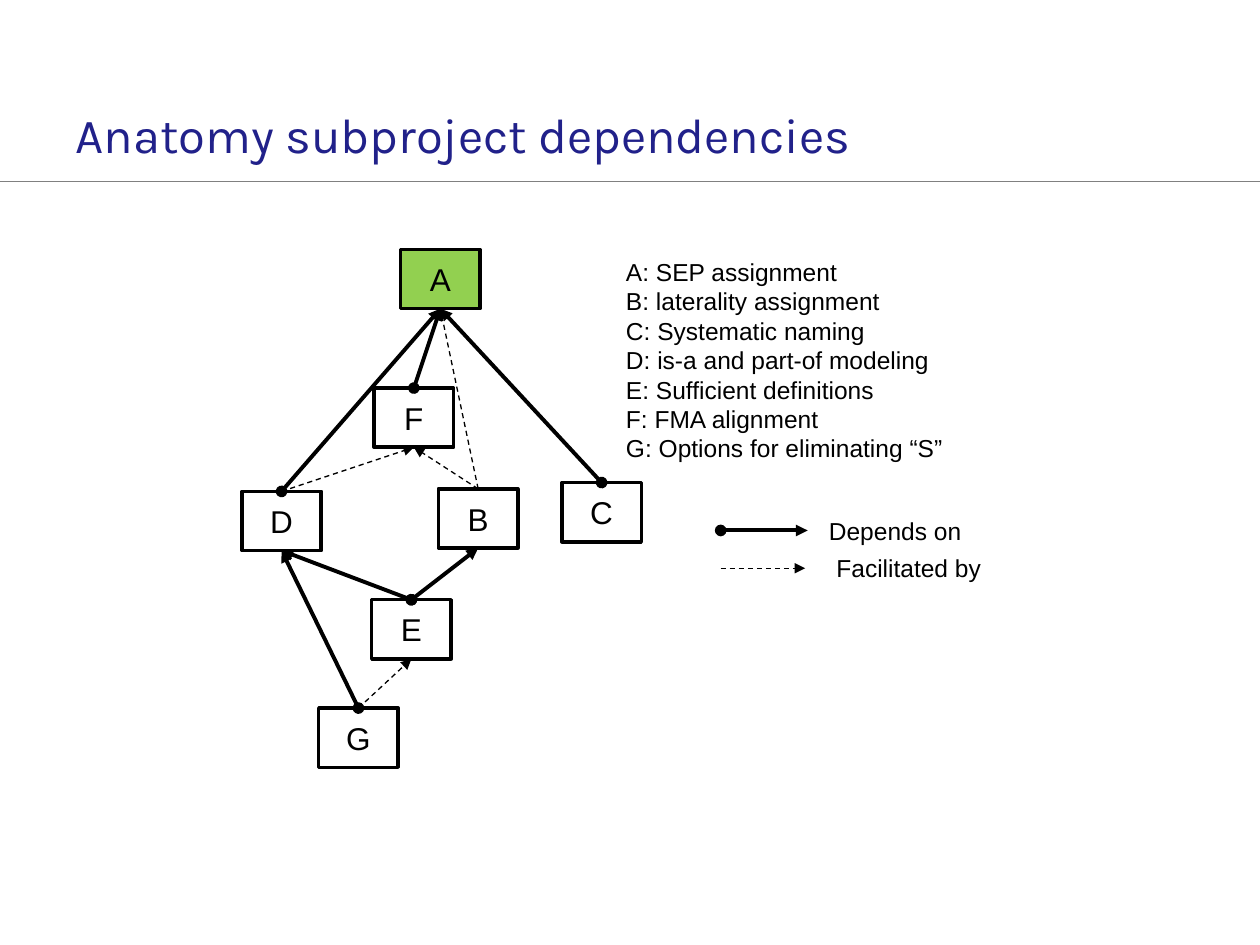
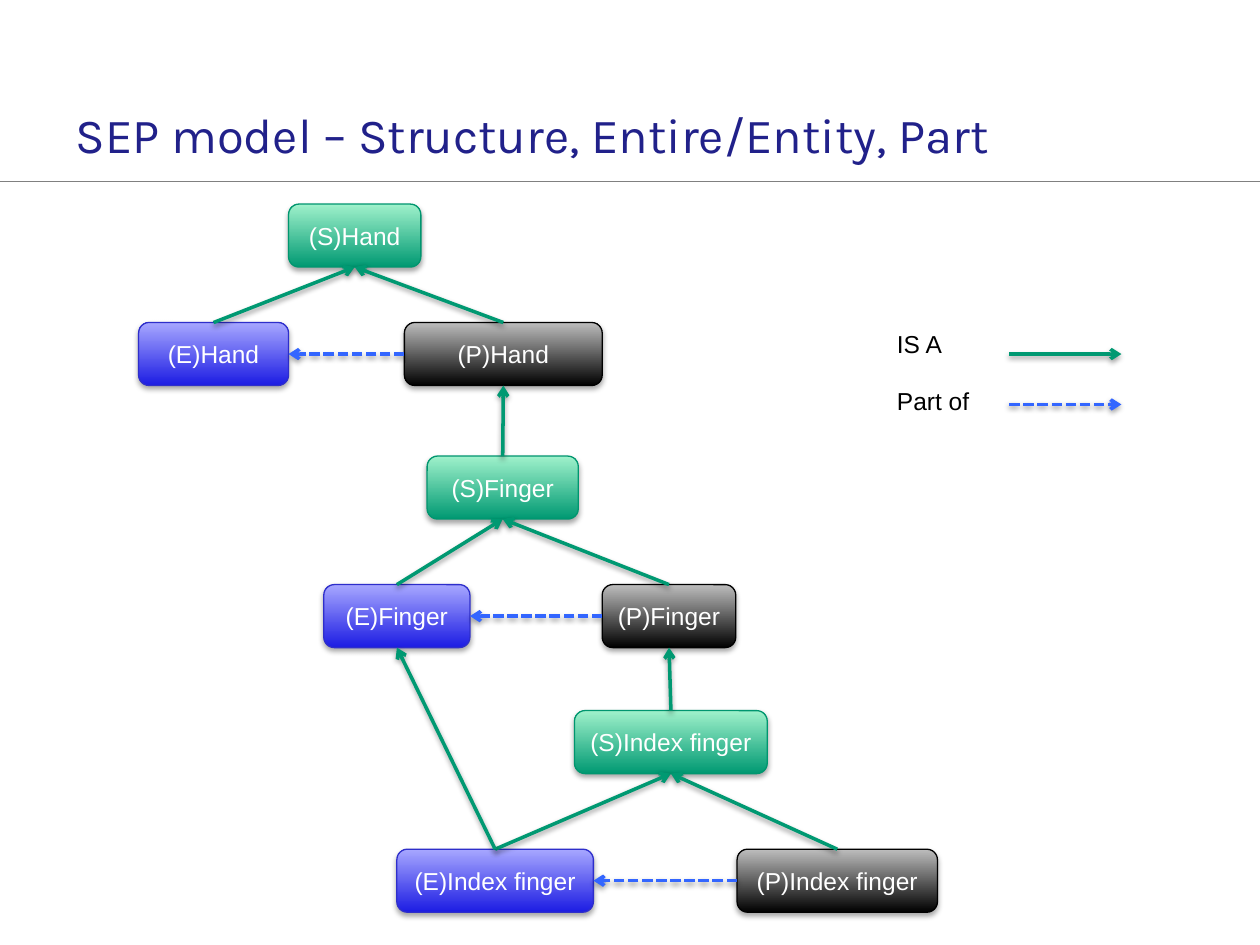
"""Build two slides on anatomy dependencies and the SEP model."""
from dataclasses import dataclass

from lxml.etree import SubElement as Sub
from pptx import Presentation
from pptx.dml.color import RGBColor as Rgb
from pptx.enum.dml import MSO_LINE as Dash
from pptx.enum.shapes import MSO_CONNECTOR as Link, MSO_SHAPE as Kind
from pptx.enum.text import MSO_ANCHOR as Anchor, MSO_AUTO_SIZE as Fit, PP_ALIGN as Align
from pptx.oxml.ns import qn
from pptx.util import Inches, Pt

COLS, ROWS = 100, 75
CELL = Inches(0.1)
TOP, LEFT, FOOT, RIGHT = range(4)
HUES = {
    "title": "21218A", "rule": "808080", "ink": "000000", "paper": "FFFFFF",
    "done": "92D050", "isa": "009972", "part": "3366FF",
}
TONES = {
    "E": ("1C1CE3", "A7A7FF", "2E2ECB"),
    "S": ("009972", "9FF1CB", "00966F"),
    "P": ("000000", "BDBDBD", "000000"),
}
LINES = {
    "rule": dict(hue="rule", width=0.75),
    "needs": dict(hue="ink", width=2.25, head="oval", tail="triangle"),
    "helps": dict(hue="ink", width=0.75, dash=Dash.DASH, tail="triangle"),
    "isa": dict(hue="isa", width=2, tail="arrow", shade=20000),
    "part": dict(hue="part", width=2, dash=Dash.SQUARE_DOT, tail="arrow", shade=20000),
}


@dataclass
class Box:
    """An area of the slide, in grid columns and rows."""
    x: float
    y: float
    w: float
    h: float

    def sub(self, x, y, w=0, h=0):
        """Return an area placed from this one's corner."""
        return Box(self.x + x, self.y + y, w, h)

    def size(self):
        """Return left, top, width and height as lengths."""
        return [round(n * CELL) for n in (self.x, self.y, self.w, self.h)]


def tint(name):
    """Return the colour of a given name."""
    return Rgb.from_string(HUES[name])


def effect(shape, drop=0, alpha=35):
    """Give a shape a soft shadow, or an empty effect list."""
    group = Sub(shape.element.spPr, qn("a:effectLst"))
    if drop:
        cast = Sub(group, qn("a:outerShdw"), blurRad="40000", dist=str(drop),
                   dir="5400000", rotWithShape="0")
        hue = Sub(cast, qn("a:srgbClr"), val=HUES["ink"])
        Sub(hue, qn("a:alpha"), val=str(alpha * 1000))


def write(para, text, size, hue="ink", font="Arial"):
    """Add one run of text to a paragraph."""
    run = para.add_run()
    run.text = text
    run.font.size, run.font.name = Pt(size), font
    run.font.color.rgb = tint(hue)


def note(slide, box, rows, gap=0, fill=True):
    """Add a text box with one paragraph per row."""
    shape = slide.shapes.add_textbox(*box.size())
    if fill:
        shape.fill.solid()
        shape.fill.fore_color.rgb = tint("paper")
    frame = shape.text_frame
    frame.word_wrap = True
    for i, row in enumerate(rows):
        para = frame.add_paragraph() if i else frame.paragraphs[0]
        if i and gap:
            para.space_before = Pt(gap)
        write(para, row, 14)


def stroke(slide, style, box=None, ends=None):
    """Draw a styled line across a box or between two nodes."""
    x, y, w, h = box.size() if box else (0, 0, 0, 0)
    line = slide.shapes.add_connector(Link.STRAIGHT, x, y, x + w, y + h)
    if ends:
        first, out, last, into = ends
        line.begin_connect(first, out)
        line.end_connect(last, into)
    look = LINES[style]
    line.line.color.rgb = tint(look["hue"])
    line.line.width = Pt(look["width"])
    if "dash" in look:
        line.line.dash_style = look["dash"]
    edge = line.element.spPr.get_or_add_ln()
    for end in ("head", "tail"):
        if end in look:
            Sub(edge, qn(f"a:{end}End"), type=look[end])
    effect(line, look.get("shade", 0), 38)


def label(shape, text, size, hue):
    """Centre a label in a node."""
    frame = shape.text_frame
    frame.vertical_anchor = Anchor.MIDDLE
    frame.paragraphs[0].alignment = Align.CENTER
    write(frame.paragraphs[0], text, size, hue)


def block(slide, box, name):
    """Draw a plain task node."""
    shape = slide.shapes.add_shape(Kind.FLOWCHART_PROCESS, *box.size())
    shape.shadow.inherit = False
    shape.fill.solid()
    shape.fill.fore_color.rgb = tint("done" if name == "A" else "paper")
    shape.line.color.rgb = tint("ink")
    shape.line.width = Pt(2)
    label(shape, name, 18, "ink")
    return shape


def pill(slide, box, role, name):
    """Draw a rounded, shaded concept node."""
    dark, light, edge = TONES[role]
    shape = slide.shapes.add_shape(Kind.ROUNDED_RECTANGLE, *box.size())
    shape.fill.gradient()
    shape.fill.gradient_angle = 90
    for stop, hue in zip(shape.fill.gradient_stops, (dark, light)):
        stop.color.rgb = Rgb.from_string(hue)
    shape.line.color.rgb = Rgb.from_string(edge)
    shape.line.width = Pt(0.75)
    effect(shape, 23000)
    label(shape, f"({role}){name}", 14, "paper")
    return shape


def start(deck, text, width):
    """Add a slide with its title and rule."""
    slide = deck.slides.add_slide(deck.slide_layouts[5])
    stroke(slide, "rule", Box(0, 14.4, COLS, 0))
    title = slide.shapes.title
    title.left, title.top, title.width, title.height = Box(5, 7.8, width, 5.6).size()
    frame = title.text_frame
    frame.auto_size, frame.word_wrap = Fit.NONE, True
    frame.vertical_anchor = Anchor.MIDDLE
    frame.margin_left = frame.margin_right = frame.margin_top = frame.margin_bottom = CELL
    frame.paragraphs[0].alignment = Align.LEFT
    write(frame.paragraphs[0], text, 28, "title", "Karla")
    return slide


def graph(slide, box):
    """Draw the subproject nodes and their links."""
    spots = {"A": (12.6, 0), "B": (15.6, 19), "D": (0, 19.2), "E": (10.3, 27.8),
             "C": (25.4, 18.5), "F": (10.5, 11), "G": (6.1, 36.4)}
    nodes = {n: block(slide, box.sub(*at, 6.3, 4.7), n) for n, at in spots.items()}
    links = {"helps": "BA GE DF BF", "needs": "DA ED EB CA FA GD"}
    for style, pairs in links.items():
        for a, b in pairs.split():
            stroke(slide, style, ends=(nodes[a], TOP, nodes[b], FOOT))


def key(slide, box):
    """Explain the two kinds of dependency."""
    stroke(slide, "needs", box.sub(0, 1.6, 6.9))
    stroke(slide, "helps", box.sub(0, 4.6, 6.7))
    note(slide, box.sub(7.6, 0, 14.2, 3.4), ["Depends on"])
    note(slide, box.sub(8.2, 2.9, 15.6, 3.4), ["Facilitated by"])


def tree(slide, box):
    """Draw the concept nodes and their relations."""
    spots = {
        "Hand": {"E": (0, 9.4, 11.9), "S": (11.9, 0, 10.5), "P": (21.1, 9.4, 15.7)},
        "Finger": {"E": (14.7, 30.2, 11.6), "S": (22.9, 20, 12), "P": (36.8, 30.2, 10.6)},
        "Index finger": {"E": (20.5, 51.2, 15.6), "S": (34.6, 40.2, 15.3),
                         "P": (47.5, 51.2, 15.9)},
    }
    nodes = [{role: pill(slide, box.sub(x, y, w, 5), role, name)
              for role, (x, y, w) in trio.items()} for name, trio in spots.items()]
    for trio in nodes:
        for role in "EP":
            stroke(slide, "isa", ends=(trio[role], TOP, trio["S"], FOOT))
        stroke(slide, "part", ends=(trio["P"], LEFT, trio["E"], RIGHT))
    hand, finger, index = nodes
    for low, high in ((finger["S"], hand["P"]), (index["S"], finger["P"]),
                      (index["E"], finger["E"])):
        stroke(slide, "isa", ends=(low, TOP, high, FOOT))


def legend(slide, box):
    """Explain the two kinds of relation."""
    note(slide, box, ["IS A", "Part of"], gap=16, fill=False)
    stroke(slide, "isa", box.sub(9.9, 2.5, 8.9))
    stroke(slide, "part", box.sub(9.9, 6.5, 8.9))


def main():
    """Build and save the deck."""
    deck = Presentation()
    deck.slide_width, deck.slide_height = COLS * CELL, ROWS * CELL
    slide = start(deck, "Anatomy subproject dependencies", 72.1)
    graph(slide, Box(19.2, 19.8, 31.7, 41.1))
    key(slide, Box(57.2, 40.5, 23.8, 6.3))
    note(slide, Box(48.7, 19.9, 30, 17.5), [
        "A: SEP assignment", "B: laterality assignment", "C: Systematic naming",
        "D: is-a and part-of modeling", "E: Sufficient definitions",
        "F: FMA alignment", "G: Options for eliminating “S”"])
    slide = start(deck, "SEP model – Structure, Entire/Entity, Part", 75.4)
    tree(slide, Box(11, 16.2, 63.4, 56.2))
    legend(slide, Box(70.2, 25.6, 24.5, 8.1))
    deck.save("out.pptx")


if __name__ == "__main__":
    main()
